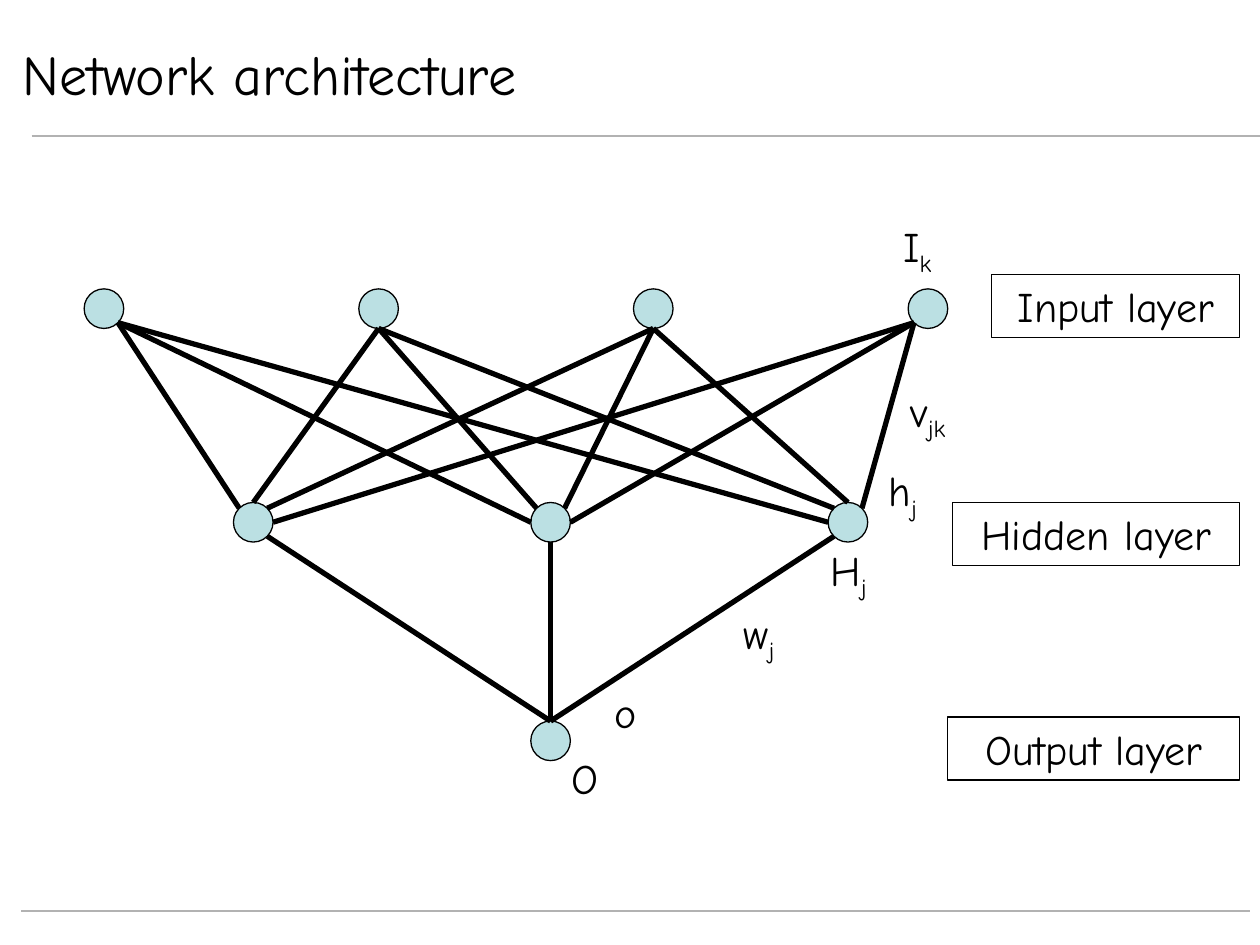
import dataclasses
import math
import typing

import pptx
import pptx.dml.color
import pptx.enum.shapes
import pptx.enum.text
import pptx.oxml.ns
import pptx.util
from lxml import etree

Inches = pptx.util.Inches
Color = pptx.dml.color.RGBColor


@dataclasses.dataclass(frozen=True)
class Theme:
    font: str = "Comic Neue"
    title_size: float = 32
    label_size: float = 24
    outline: float = 0.75
    rule_width: float = 1.5
    edge_width: float = 3
    subscript: str = "-25000"
    ink: Color = Color.from_string("000000")
    paper: Color = Color.from_string("FFFFFF")
    rule: Color = Color.from_string("B2B2B2")
    node: Color = Color.from_string("BBE0E3")


THEME = Theme()
RADIUS = 0.157

# Compass direction of each attachment point, in degrees clockwise from east
ANGLES = {"E": 0, "SE": 45, "S": 90, "SW": 135,
          "W": 180, "NW": 225, "N": 270, "NE": 315}


class Node(typing.NamedTuple):
    x: float
    y: float

    def site(self, direction: str) -> tuple[float, float]:
        angle = math.radians(ANGLES[direction])
        return (self.x + RADIUS * math.cos(angle),
                self.y + RADIUS * math.sin(angle))


class Label(typing.NamedTuple):
    text: str
    subscript: str
    left: float
    top: float
    width: float


class LayerBox(typing.NamedTuple):
    text: str
    left: float
    top: float


# Network: evenly spaced nodes in each layer
INPUTS = [Node(0.825 + 2.18 * column, 2.45) for column in range(4)]
HIDDEN = [Node(2.01 + 2.36 * column, 4.145) for column in range(3)]
OUTPUT = Node(4.37, 5.88)

# For each input: its leaving point, then the arrival point on each hidden node
INPUT_SITES = [
    ("SE", ("NW", "W", "W")),
    ("S", ("N", "NW", "NW")),
    ("S", ("NE", "NE", "N")),
    ("SW", ("E", "E", "NE")),
]
OUTPUT_SITES = ("SE", "S", "SW")

BOX_RIGHT = 9.84
LAYER_BOXES = [
    LayerBox("Input layer", 7.87, 2.18),
    LayerBox("Hidden layer", 7.56, 3.99),
    LayerBox("Output layer", 7.52, 5.69),
]
LABELS = [
    Label("I", "k", 6.81, 1.7, 0.94),
    Label("h", "j", 6.89, 3.64, 0.55),
    Label("H", "j", 6.42, 4.27, 0.63),
    Label("o", "", 4.69, 5.4, 0.55),
    Label("O", "", 4.29, 5.92, 0.71),
    Label("v", "jk", 7.05, 3.01, 0.63),
    Label("w", "j", 5.71, 4.77, 0.63),
]


def apply_format(target: typing.Any, values: dict[str, typing.Any]) -> None:
    for name, value in values.items():
        setattr(target, name, value)


def set_outline(shape: typing.Any, color: Color, width: float) -> None:
    shape.line.color.rgb = color
    shape.line.width = pptx.util.Pt(width)


def draw_line(slide: typing.Any, start: tuple[float, float],
              end: tuple[float, float], color: Color, width: float) -> None:
    connector = slide.shapes.add_connector(
        pptx.enum.shapes.MSO_CONNECTOR.STRAIGHT,
        *(Inches(value) for value in (*start, *end)))
    set_outline(connector, color, width)
    etree.SubElement(connector._element.spPr, pptx.oxml.ns.qn("a:effectLst"))


def draw_node(slide: typing.Any, node: Node) -> None:
    shape = slide.shapes.add_shape(
        pptx.enum.shapes.MSO_SHAPE.OVAL,
        Inches(node.x - RADIUS), Inches(node.y - RADIUS),
        Inches(2 * RADIUS), Inches(2 * RADIUS))
    shape.shadow.inherit = False
    shape.fill.solid()
    shape.fill.fore_color.rgb = THEME.node
    set_outline(shape, THEME.ink, THEME.outline)


def draw_text(slide: typing.Any, text: str, left: float, top: float,
              width: float, subscript: str = "",
              size: float = THEME.label_size,
              **frame_format: typing.Any) -> typing.Any:
    box = slide.shapes.add_textbox(
        Inches(left), Inches(top), Inches(width), Inches(0.5))
    apply_format(box.text_frame, {"word_wrap": True, **frame_format})
    paragraph = box.text_frame.paragraphs[0]
    paragraph.alignment = pptx.enum.text.PP_ALIGN.CENTER
    for part in filter(None, (text, subscript)):
        run = paragraph.add_run()
        run.text = part
        apply_format(run.font, {"name": THEME.font,
                                "size": pptx.util.Pt(size)})
        run.font.color.rgb = THEME.ink
    if subscript:
        run._r.get_or_add_rPr().set("baseline", THEME.subscript)
    return box


def draw_title(slide: typing.Any) -> None:
    title = draw_text(slide, "Network architecture", 0.08, 0.33, 7.83,
                      size=THEME.title_size,
                      vertical_anchor=pptx.enum.text.MSO_ANCHOR.MIDDLE)
    title.text_frame.paragraphs[0].alignment = pptx.enum.text.PP_ALIGN.LEFT
    title.fill.solid()
    title.fill.fore_color.rgb = THEME.paper
    set_outline(title, THEME.paper, THEME.outline)


def draw_network(slide: typing.Any) -> None:
    for node in [*INPUTS, *HIDDEN, OUTPUT]:
        draw_node(slide, node)
    edges = [(source.site(leave), target.site(arrive))
             for source, (leave, arrivals) in zip(INPUTS, INPUT_SITES)
             for target, arrive in zip(HIDDEN, arrivals)]
    edges += [(OUTPUT.site("N"), target.site(arrive))
              for target, arrive in zip(HIDDEN, OUTPUT_SITES)]
    for start, end in edges:
        draw_line(slide, start, end, THEME.ink, THEME.edge_width)


def main() -> None:
    presentation = pptx.Presentation()
    apply_format(presentation, {"slide_width": Inches(10),
                                "slide_height": Inches(7.5)})
    slide = presentation.slides.add_slide(presentation.slide_layouts[6])

    # Rules and title
    for left, right, y in ((0.25, 10, 1.08), (0.17, 9.92, 7.23)):
        draw_line(slide, (left, y), (right, y), THEME.rule, THEME.rule_width)
    draw_title(slide)

    # Nodes and edges
    draw_network(slide)

    # Layer names and symbols
    grow = {"auto_size": pptx.enum.text.MSO_AUTO_SIZE.SHAPE_TO_FIT_TEXT}
    for layer in LAYER_BOXES:
        box = draw_text(slide, layer.text, layer.left, layer.top,
                        BOX_RIGHT - layer.left, **grow)
        set_outline(box, THEME.ink, THEME.outline)
    for label in LABELS:
        draw_text(slide, label.text, label.left, label.top, label.width,
                  label.subscript, **grow)

    presentation.save("out.pptx")


if __name__ == "__main__":
    main()
